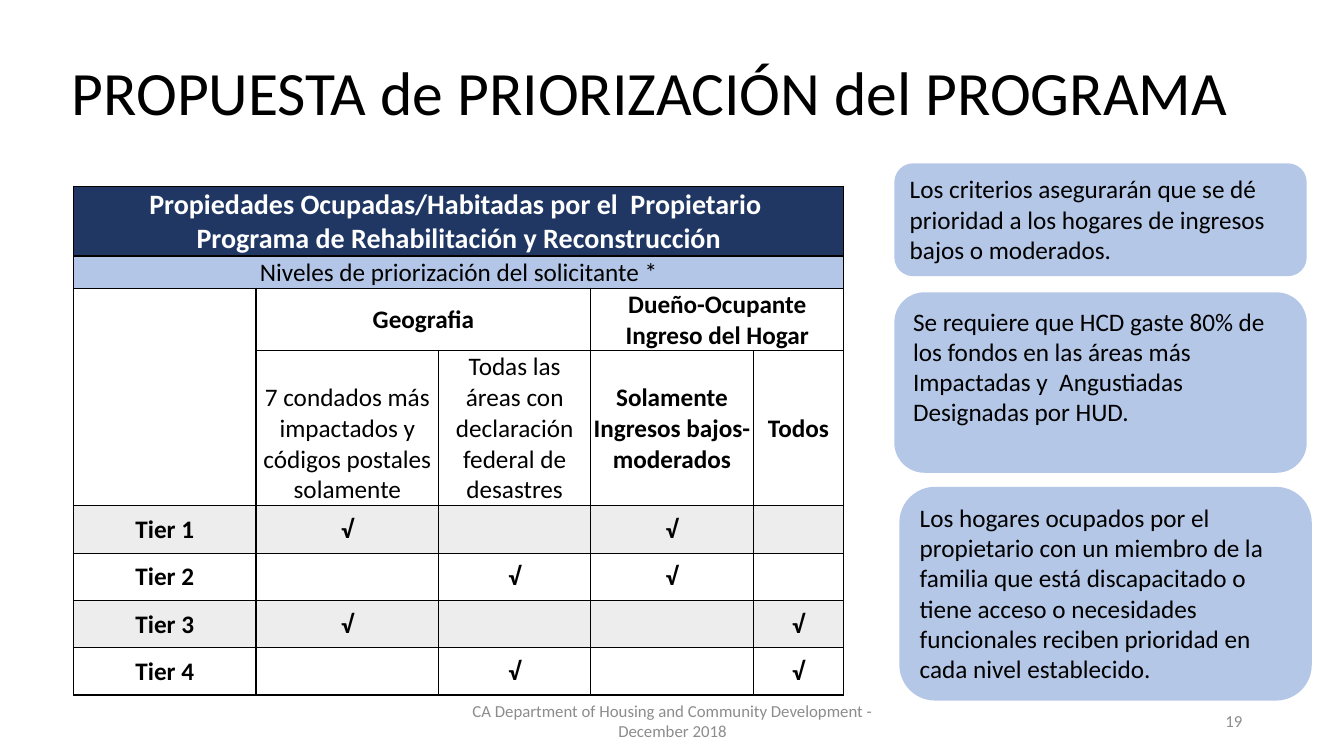
"""Build the slide on program prioritization tiers."""
from lxml.etree import SubElement, Element
from pptx import Presentation
from pptx.dml.color import RGBColor
from pptx.enum.shapes import MSO_SHAPE as Shape
from pptx.enum.text import MSO_ANCHOR as Anchor, MSO_AUTO_SIZE as AutoSize, PP_ALIGN as Align
from pptx.oxml.ns import qn
from pptx.util import Inches, Pt

FONT = "Calibri"
TITLE = "PROPUESTA de PRIORIZACIÓN del PROGRAMA"
CHECK = "√"
ROWS = [
    ["Propiedades Ocupadas/Habitadas por el  Propietario \n"
     "Programa de Rehabilitación y Reconstrucción", "", "", "", ""],
    ["Niveles de priorización del solicitante *", "", "", "", ""],
    ["", "Geografia", "", "Dueño-Ocupante\nIngreso del Hogar", ""],
    ["", "7 condados más impactados y códigos postales solamente",
     "Todas las áreas con declaración federal de desastres",
     "Solamente Ingresos bajos-moderados", "Todos"],
    ["Tier 1", CHECK, "", CHECK, ""],
    ["Tier 2", "", CHECK, CHECK, ""],
    ["Tier 3", CHECK, "", "", CHECK],
    ["Tier 4", "", CHECK, "", CHECK],
]
MERGES = [((0, 0), (0, 4)), ((1, 0), (1, 4)), ((2, 0), (3, 0)),
          ((2, 1), (2, 2)), ((2, 3), (2, 4))]
COLUMN_WIDTHS = [1.81, 1.81, 1.51, 1.61, 0.9]
ROW_HEIGHTS = [0.67, 0.32, 0.6, 1.51] + [0.47] * 4
ROW_FILLS = {0: "203764", 1: "B4C6E7", 4: "EDEDED", 6: "EDEDED"}
LIGHT_CELLS = [(1, 0), (3, 1), (3, 2)]
NOTES = [
    ("Los criterios asegurarán que se dé prioridad a los hogares de ingresos "
     "bajos o moderados.", (8.87, 1.62, 4.09, 1.12)),
    ("Se requiere que HCD gaste 80% de los fondos en las áreas más Impactadas y  "
     "Angustiadas Designadas por HUD.", (8.87, 2.9, 4.09, 1.79)),
    ("Los hogares ocupados por el propietario con un miembro de la familia que está "
     "discapacitado o tiene acceso o necesidades funcionales reciben prioridad en "
     "cada nivel establecido.", (8.92, 4.83, 4.09, 2.12)),
]
FOOTERS = [
    ("CA Department of Housing and Community Development - December 2018",
     (4.42, 6.95, 4.5, 0.4), Align.CENTER),
    ("19", (9.42, 6.95, 3, 0.4), Align.RIGHT),
]


def color(value):
    return RGBColor.from_string(value)


def write(frame, text, size, ink="000000", align=Align.LEFT, bold=False):
    frame.text = text
    frame.word_wrap = True
    for para in frame.paragraphs:
        para.alignment = align
        for span in para.runs:
            span.font.name, span.font.size, span.font.bold = FONT, Pt(size), bold
            span.font.color.rgb = color(ink)


def set_borders(cell, row, column):
    header = row < 3 or (row, column) == (3, 0)
    heavy_sides = {
        "L": header or column in (0, 1, 3),
        "R": header or column in (0, 2, 4),
        "T": header or row == 3 or (row, column) == (4, 0),
        "B": header or row == len(ROWS) - 1,
    }
    properties = cell._tc.get_or_add_tcPr()
    for index, (side, heavy) in enumerate(heavy_sides.items()):
        line = Element(qn(f"a:ln{side}"), w=str(Pt(1 if heavy else 0.5)))
        fill = SubElement(line, qn("a:solidFill"))
        SubElement(fill, qn("a:srgbClr"), val="000000")
        properties.insert(index, line)


def format_cell(cell, row, column):
    text = ROWS[row][column]
    if row in ROW_FILLS:
        cell.fill.solid()
        cell.fill.fore_color.rgb = color(ROW_FILLS[row])
    else:
        cell.fill.background()
    if text:
        cell.margin_left = cell.margin_top = cell.margin_right = Inches(0.01)
        cell.margin_bottom = 0
        light = (row, column) in LIGHT_CELLS
        cell.vertical_anchor = Anchor.BOTTOM if light and row == 3 else Anchor.MIDDLE
        write(cell.text_frame, text, 18 if row else 20,
              "000000" if row else "FFFFFF", Align.CENTER, not light)
    set_borders(cell, row, column)


def add_tiers(page):
    table = page.shapes.add_table(
        len(ROWS), len(COLUMN_WIDTHS), Inches(0.73), Inches(1.85),
        Inches(sum(COLUMN_WIDTHS)), Inches(sum(ROW_HEIGHTS))).table
    table.first_row = table.horz_banding = False
    for column, width in zip(table.columns, COLUMN_WIDTHS):
        column.width = Inches(width)
    for row, height in zip(table.rows, ROW_HEIGHTS):
        row.height = Inches(height)
    for first, last in MERGES:
        table.cell(*first).merge(table.cell(*last))
    for row in range(len(ROWS)):
        for column in range(len(COLUMN_WIDTHS)):
            format_cell(table.cell(row, column), row, column)


def main():
    deck = Presentation()
    deck.slide_width, deck.slide_height = Inches(13.33), Inches(7.5)
    page = deck.slides.add_slide(deck.slide_layouts[5])
    title = page.shapes.title
    title.left, title.top, title.width, title.height = map(Inches, (0.61, 0.22, 11.75, 1.45))
    write(title.text_frame, TITLE, 44)
    title.text_frame.auto_size = AutoSize.NONE
    title.text_frame.vertical_anchor = Anchor.MIDDLE
    title.text_frame.paragraphs[0].line_spacing = 0.9
    add_tiers(page)
    for text, place in NOTES:
        box = page.shapes.add_shape(Shape.ROUNDED_RECTANGLE, *map(Inches, place))
        box.shadow.inherit = False
        box.fill.solid()
        box.fill.fore_color.rgb = color("B4C7E7")
        box.line.fill.background()
        box.text_frame.vertical_anchor = Anchor.TOP
        write(box.text_frame, text, 18)
    for text, place, align in FOOTERS:
        box = page.shapes.add_textbox(*map(Inches, place))
        box.text_frame.vertical_anchor = Anchor.MIDDLE
        write(box.text_frame, text, 12, "8C8C8C", align)
    deck.save("out.pptx")


if __name__ == "__main__":
    main()
